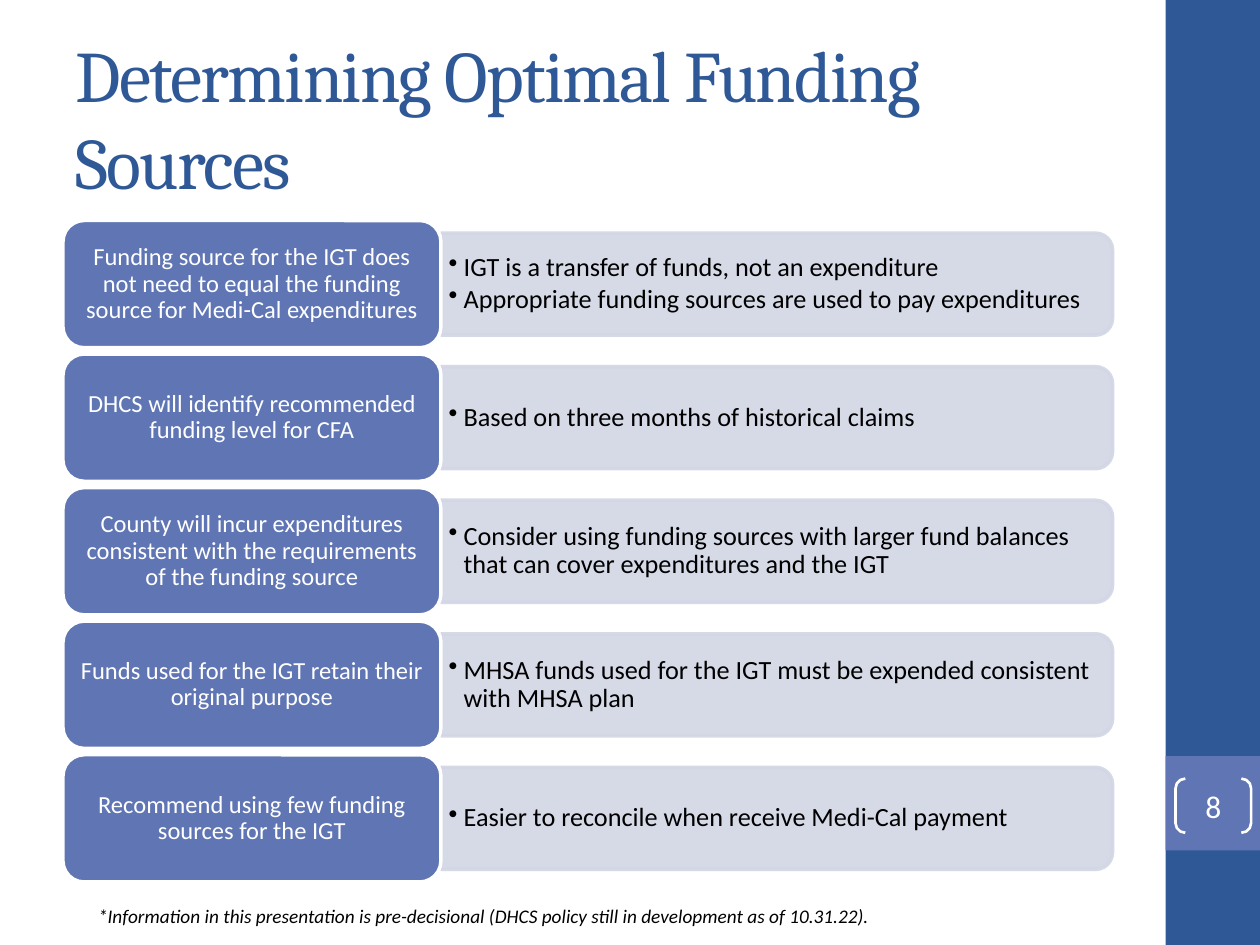
"""Build the slide on determining optimal funding sources."""
import pptx
import pptx.dml.color
import pptx.enum.shapes
import pptx.enum.text
import pptx.oxml
import pptx.oxml.ns
import pptx.util

SHAPE = pptx.enum.shapes.MSO_SHAPE
ALIGN = pptx.enum.text.PP_ALIGN
ANCHOR = pptx.enum.text.MSO_ANCHOR
Inches = pptx.util.Inches
Pt = pptx.util.Pt

COLORS = {
    "navy": "2F5897",
    "blue": "6076B4",
    "pale": "D2D6E5",
    "white": "FFFFFF",
    "black": "000000",
}
WIDTH, HEIGHT = 10, 7.5
LEFT = 0.5
BAND = 0.75
TOP, PITCH, ROW_HEIGHT = 1.75, 1.06, 1.01
LABEL_WIDTH = 3
PANEL_WIDTH, PANEL_HEIGHT = 5.33, 0.81
INSETS = (0.06, 0.03)

ROWS = [
    ("Funding source for the IGT does not need to equal the funding source for Medi-Cal expenditures",
     ["IGT is a transfer of funds, not an expenditure",
      "Appropriate funding sources are used to pay expenditures"]),
    ("DHCS will identify recommended funding level for CFA",
     ["Based on three months of historical claims"]),
    ("County will incur expenditures consistent with the requirements of the funding source",
     ["Consider using funding sources with larger fund balances that can cover expenditures and the IGT"]),
    ("Funds used for the IGT retain their original purpose",
     ["MHSA funds used for the IGT must be expended consistent with MHSA plan"]),
    ("Recommend using few funding sources for the IGT",
     ["Easier to reconcile when receive Medi-Cal payment"]),
]


def rgb(name):
    return pptx.dml.color.RGBColor.from_string(COLORS[name])


def place(left, top, width, height):
    return [Inches(value) for value in (left, top, width, height)]


def add_box(page, kind, area, fill=None, line=None, line_width=2):
    box = page.shapes.add_shape(kind, *place(*area))
    box.shadow.inherit = False
    if fill:
        box.fill.solid()
        box.fill.fore_color.rgb = rgb(fill)
    else:
        box.fill.background()
    if line:
        box.line.color.rgb = rgb(line)
        box.line.width = Pt(line_width)
    else:
        box.line.fill.background()
    return box


def set_frame(box, insets=(0.1, 0.05), anchor=ANCHOR.MIDDLE):
    frame = box.text_frame
    frame.word_wrap = True
    frame.auto_size = pptx.enum.text.MSO_AUTO_SIZE.NONE
    frame.vertical_anchor = anchor
    frame.margin_left = frame.margin_right = Inches(insets[0])
    frame.margin_top = frame.margin_bottom = Inches(insets[1])
    return frame


def write(para, text, size, color, font="Calibri", align=ALIGN.LEFT, italic=False):
    para.alignment = align
    span = para.add_run()
    span.text = text
    span.font.size = Pt(size)
    span.font.name = font
    span.font.italic = italic
    span.font.color.rgb = rgb(color)
    return span


def add_bullet(para):
    props = para._p.get_or_add_pPr()
    indent = Inches(0.12)
    props.set("marL", str(indent))
    props.set("indent", str(-indent))
    bullet = pptx.oxml.parse_xml(
        f'<a:buChar {pptx.oxml.ns.nsdecls("a")} char="•"/>')
    props.append(bullet)


def make_translucent(box, percent):
    for color in box._element.spPr.iter(pptx.oxml.ns.qn("a:srgbClr")):
        alpha = pptx.oxml.parse_xml(
            f'<a:alpha {pptx.oxml.ns.nsdecls("a")} val="{percent * 1000}"/>')
        color.append(alpha)


def add_title(page, text):
    title = page.shapes.title
    title.left, title.top, title.width, title.height = place(LEFT, 0.3, 8.33, 1.25)
    para = set_frame(title).paragraphs[0]
    span = write(para, text, 41.4, "navy", "Cambria")
    span._r.get_or_add_rPr().set("spc", "-100")


def add_panel(page, middle, points):
    left = LEFT + LABEL_WIDTH
    area = (left + (PANEL_WIDTH - PANEL_HEIGHT) / 2, middle - PANEL_WIDTH / 2,
            PANEL_HEIGHT, PANEL_WIDTH)
    panel = add_box(page, SHAPE.ROUND_2_SAME_RECTANGLE, area, "pale", "pale")
    panel.rotation = 90
    make_translucent(panel, 90)
    height = 0.73
    box = page.shapes.add_textbox(*place(left, middle - height / 2, 5.29, height))
    frame = set_frame(box, INSETS)
    for index, point in enumerate(points):
        para = frame.add_paragraph() if index else frame.paragraphs[0]
        para.line_spacing = 0.9
        para.space_after = Pt(2.25)
        write(para, point, 15, "black")
        add_bullet(para)


def add_label(page, top, text):
    area = (LEFT, top, LABEL_WIDTH, ROW_HEIGHT)
    label = add_box(page, SHAPE.ROUNDED_RECTANGLE, area, "blue", "white")
    para = set_frame(label, INSETS).paragraphs[0]
    para.line_spacing = 0.9
    write(para, text, 14, "white", align=ALIGN.CENTER)


def add_side_band(page):
    left = WIDTH - BAND
    add_box(page, SHAPE.RECTANGLE, (left, 0, BAND, HEIGHT), "navy")
    add_box(page, SHAPE.RECTANGLE, (left, HEIGHT * 0.8, BAND, BAND), "blue")


def add_page_number(page, number):
    bracket = add_box(page, SHAPE.DOUBLE_BRACKET, (9.33, 6.18, 0.6, 0.43),
                      line="white", line_width=1.5)
    bracket.adjustments[0] = 0.18
    para = set_frame(bracket, (0, 0)).paragraphs[0]
    write(para, number, 18, "white", align=ALIGN.CENTER)


def add_footnote(page, text):
    box = page.shapes.add_textbox(*place(0.68, 7.13, 8.26, 0.29))
    para = set_frame(box, anchor=ANCHOR.TOP).paragraphs[0]
    write(para, text, 11, "black", italic=True)


def main():
    deck = pptx.Presentation()
    deck.slide_width, deck.slide_height = Inches(WIDTH), Inches(HEIGHT)
    page = deck.slides.add_slide(deck.slide_layouts.get_by_name("Title Only"))
    add_side_band(page)
    add_footnote(page, "*Information in this presentation is pre-decisional "
                       "(DHCS policy still in development as of 10.31.22).")
    add_title(page, "Determining Optimal Funding Sources")
    for index, (label, points) in enumerate(ROWS):
        top = TOP + index * PITCH
        add_panel(page, top + ROW_HEIGHT / 2, points)
        add_label(page, top, label)
    add_page_number(page, "8")
    deck.save("out.pptx")


if __name__ == "__main__":
    main()
